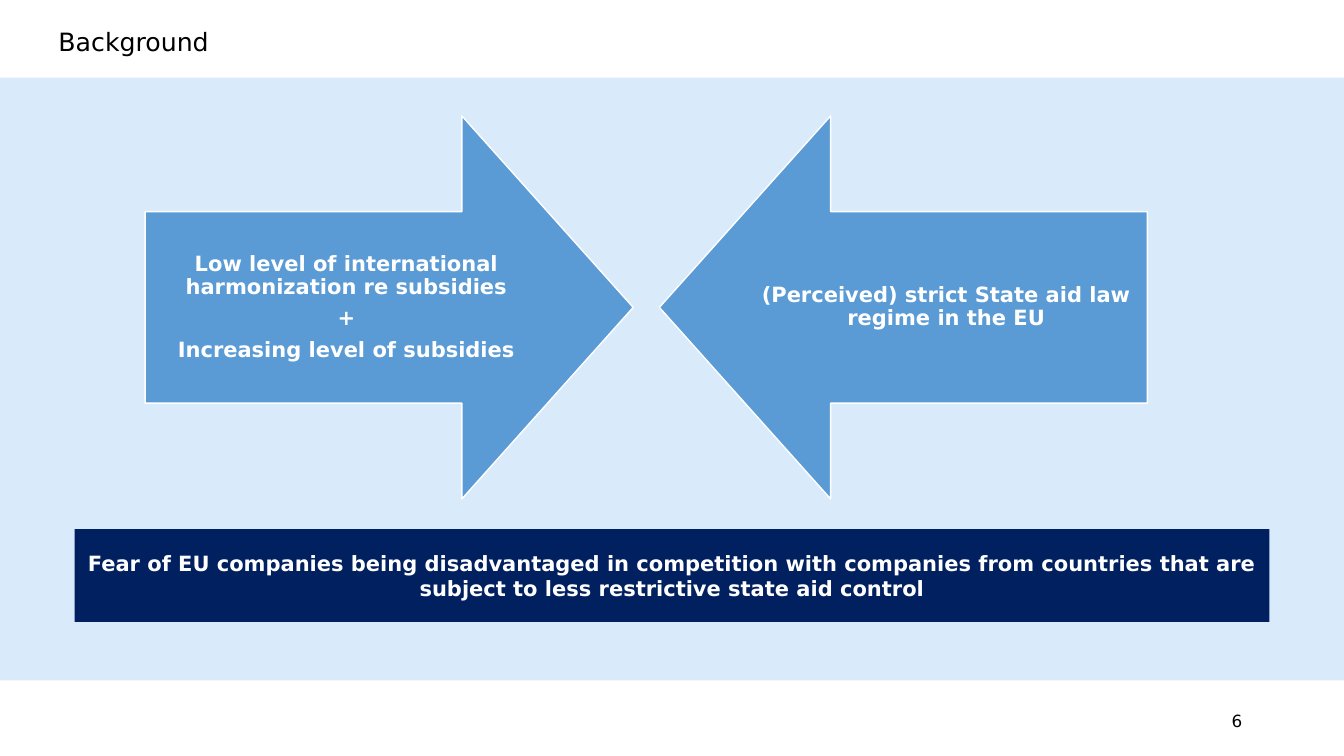
from dataclasses import dataclass
from typing import Any

from pptx import Presentation
from pptx.dml.color import RGBColor
from pptx.enum.shapes import MSO_SHAPE as Preset
from pptx.enum.text import MSO_ANCHOR as Anchor, PP_ALIGN as Align
from pptx.util import Inches, Pt

FONT = "DejaVu Sans"
ARROW_WIDTH, ARROW_HEIGHT, ARROW_TOP = 4.84, 3.8, 1.15
ARROW_FONT = {"size": Pt(15), "bold": True}
ARROW_SPACING = {"alignment": Align.CENTER, "line_spacing": 0.9, "space_after": Pt(6.3)}
ARROW_FRAME = {
    "vertical_anchor": Anchor.MIDDLE,
    "margin_left": Inches(0.14), "margin_right": Inches(0.14),
    "margin_top": Inches(0.4), "margin_bottom": Inches(0.4),
}


@dataclass
class Arrow:
    preset: Preset
    left: float
    lines: list[str]


ARROWS = [
    Arrow(Preset.RIGHT_ARROW, 1.44, [
        "Low level of international harmonization re subsidies",
        "+",
        "Increasing level of subsidies",
    ]),
    Arrow(Preset.LEFT_ARROW, 6.54, ["(Perceived) strict State aid law regime in the EU"]),
]


def rgb(value: str) -> RGBColor:
    return RGBColor.from_string(value)


def apply(target: Any, values: dict[str, Any]) -> None:
    """Set every attribute named in values on target."""
    for name, value in values.items():
        setattr(target, name, value)


def box(left: float, top: float, width: float, height: float) -> dict[str, int]:
    return {"left": Inches(left), "top": Inches(top),
            "width": Inches(width), "height": Inches(height)}


def write(shape: Any, lines: list[str], color: str, font: dict[str, Any],
          spacing: dict[str, Any], frame: dict[str, Any]) -> None:
    text_frame = shape.text_frame
    apply(text_frame, {"word_wrap": True, **frame})
    text_frame.text = "\n".join(lines)
    for paragraph in text_frame.paragraphs:
        apply(paragraph, spacing)
        apply(paragraph.font, {"name": FONT, **font})
        paragraph.font.color.rgb = rgb(color)


def add_filled(slide: Any, preset: Preset, place: dict[str, int], fill: str) -> Any:
    """Add a flat preset shape without an outline."""
    shape = slide.shapes.add_shape(preset, **place)
    shape.shadow.inherit = False
    shape.fill.solid()
    shape.fill.fore_color.rgb = rgb(fill)
    shape.line.fill.background()
    return shape


def add_arrow(slide: Any, arrow: Arrow) -> None:
    place = box(arrow.left, ARROW_TOP, ARROW_WIDTH, ARROW_HEIGHT)
    shape = add_filled(slide, arrow.preset, place, "5B9BD5")
    shape.adjustments[0] = 0.5
    shape.adjustments[1] = 0.447
    shape.line.color.rgb = rgb("FFFFFF")
    shape.line.width = Pt(1)
    write(shape, arrow.lines, "FFFFFF", ARROW_FONT, ARROW_SPACING, ARROW_FRAME)


def main() -> None:
    deck = Presentation()
    apply(deck, {"slide_width": Inches(13.33), "slide_height": Inches(7.5)})
    slide = deck.slides.add_slide(deck.slide_layouts[5])

    add_filled(slide, Preset.RECTANGLE, box(0, 0.77, 13.33, 5.98), "D9EAFB")

    title = slide.shapes.title
    apply(title, box(0.48, 0.24, 12.2, 0.44))
    write(title, ["Background"], "000000", {"size": Pt(18)},
          {"alignment": Align.LEFT, "line_spacing": 0.9}, {"vertical_anchor": Anchor.TOP})

    page_number = slide.shapes.add_textbox(**box(9.42, 6.95, 3, 0.4))
    write(page_number, ["6"], "000000", {"size": Pt(12)},
          {"alignment": Align.RIGHT}, {"vertical_anchor": Anchor.MIDDLE})

    conclusion = add_filled(slide, Preset.RECTANGLE, box(0.74, 5.25, 11.85, 0.92), "002060")
    write(conclusion,
          ["Fear of EU companies being disadvantaged in competition with companies "
           "from countries that are subject to less restrictive state aid control"],
          "FFFFFF", {"size": Pt(15), "bold": True},
          {"alignment": Align.CENTER}, {"vertical_anchor": Anchor.MIDDLE})

    for arrow in ARROWS:
        add_arrow(slide, arrow)

    deck.save("out.pptx")


if __name__ == "__main__":
    main()
